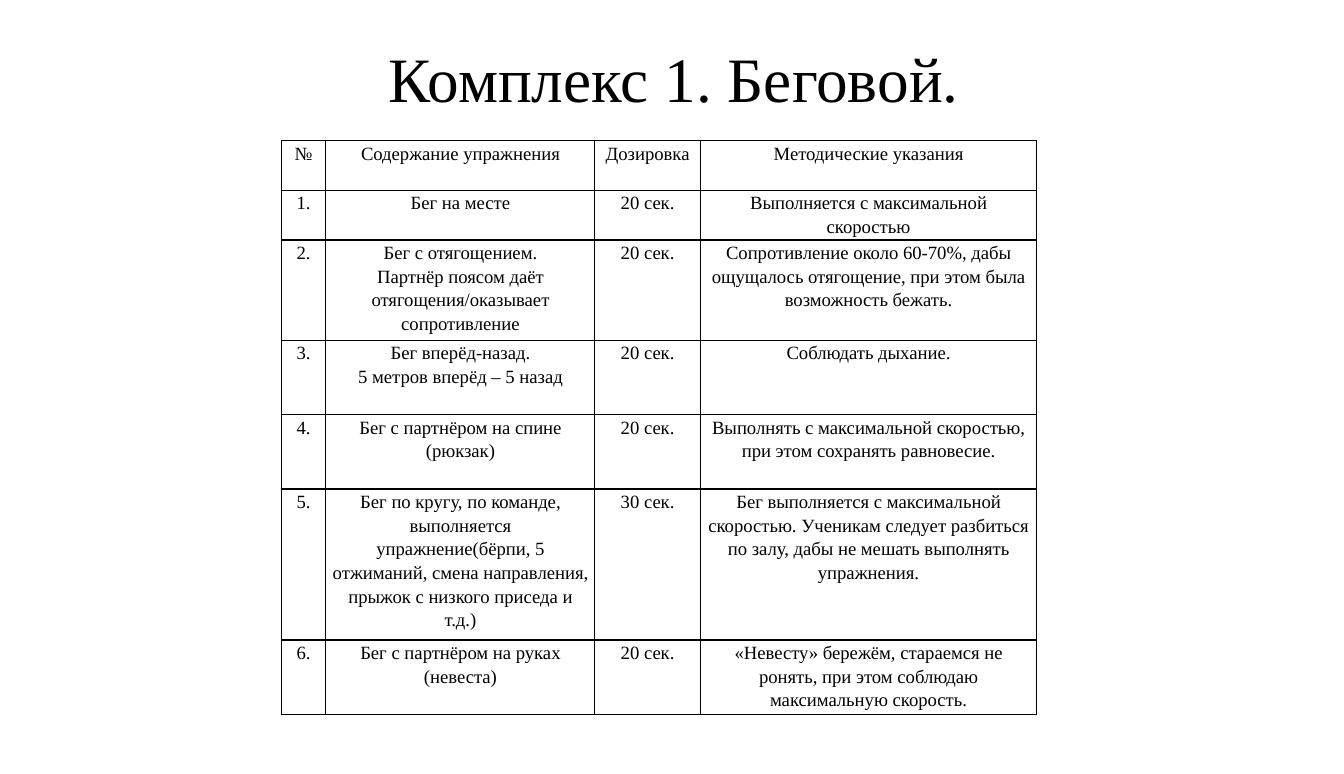
"""Build a slide with a table of running exercises."""
from lxml.etree import SubElement
from pptx import Presentation
from pptx.dml.color import RGBColor
from pptx.enum.text import MSO_ANCHOR as Anchor, PP_ALIGN as Align
from pptx.oxml import parse_xml
from pptx.oxml.ns import nsdecls
from pptx.util import Pt

BLACK = RGBColor(0x00, 0x00, 0x00)
WHITE = RGBColor(0xFF, 0xFF, 0xFF)
FONT = "Times New Roman"

COLUMN_WIDTHS = [31, 187.2, 73.4, 234]
ROW_HEIGHTS = [34.5, 34.5, 69.8, 51.8, 51.8, 105, 51.8]
HEADER = ["№", "Содержание упражнения", "Дозировка", "Методические указания"]
EXERCISES = [
    ("Бег на месте", 20, "Выполняется с максимальной скоростью"),
    ("Бег с отягощением.\nПартнёр поясом даёт отягощения/оказывает сопротивление", 20,
     "Сопротивление около 60-70%, дабы ощущалось отягощение, "
     "при этом была возможность бежать."),
    ("Бег вперёд-назад.\n5 метров вперёд – 5 назад", 20, "Соблюдать дыхание."),
    ("Бег с партнёром на спине (рюкзак)", 20,
     "Выполнять с максимальной скоростью, при этом сохранять равновесие."),
    ("Бег по кругу, по команде, выполняется упражнение(бёрпи, 5 отжиманий, "
     "смена направления, прыжок с низкого приседа и т.д.)", 30,
     "Бег выполняется с максимальной скоростью. Ученикам следует разбиться "
     "по залу, дабы не мешать выполнять упражнения."),
    ("Бег с партнёром на руках (невеста)", 20,
     "«Невесту» бережём, стараемся не ронять, при этом соблюдаю максимальную скорость."),
]


def write(text_frame, text, size, spacing=None):
    text_frame.text = text
    for paragraph in text_frame.paragraphs:
        paragraph.alignment = Align.CENTER
        paragraph.line_spacing = spacing
        for run in paragraph.runs:
            run.font.name = FONT
            run.font.size = Pt(size)
            run.font.color.rgb = BLACK


def add_borders(cell, width, color):
    properties = cell._tc.get_or_add_tcPr()
    for position, side in enumerate(["lnL", "lnR", "lnT", "lnB"]):
        line = parse_xml(f'<a:{side} {nsdecls("a")} w="{Pt(width)}"><a:solidFill/></a:{side}>')
        SubElement(line[0], line[0].tag.replace("solidFill", "srgbClr"), val=str(color))
        properties.insert(position, line)


presentation = Presentation()
presentation.slide_width = Pt(935.3)
presentation.slide_height = Pt(538.6)
slide = presentation.slides.add_slide(presentation.slide_layouts[5])

title = slide.shapes.title
title.left, title.top, title.width, title.height = Pt(48.2), Pt(8.6), Pt(841.7), Pt(90)
frame = title.text_frame
frame.vertical_anchor = Anchor.MIDDLE
frame.margin_left = frame.margin_right = Pt(8.6)
frame.margin_top = frame.margin_bottom = Pt(4.3)
write(frame, "Комплекс 1. Беговой.", size=44)

rows = [HEADER] + [
    [f"{number}.", exercise, f"{seconds} сек.", advice]
    for number, (exercise, seconds, advice) in enumerate(EXERCISES, 1)
]
table = slide.shapes.add_table(
    len(rows), len(HEADER), Pt(195.8), Pt(98),
    Pt(sum(COLUMN_WIDTHS)), Pt(sum(ROW_HEIGHTS))).table
table.first_row = table.horz_banding = False
for column, width in zip(table.columns, COLUMN_WIDTHS):
    column.width = Pt(width)
for row, height, texts in zip(table.rows, ROW_HEIGHTS, rows):
    row.height = Pt(height)
    for cell, text in zip(row.cells, texts):
        cell.margin_left = cell.margin_right = Pt(4.3)
        cell.margin_top = cell.margin_bottom = Pt(0)
        cell.fill.solid()
        cell.fill.fore_color.rgb = WHITE
        add_borders(cell, width=1, color=BLACK)
        write(cell.text_frame, text, size=13, spacing=1.15)

presentation.save("out.pptx")
